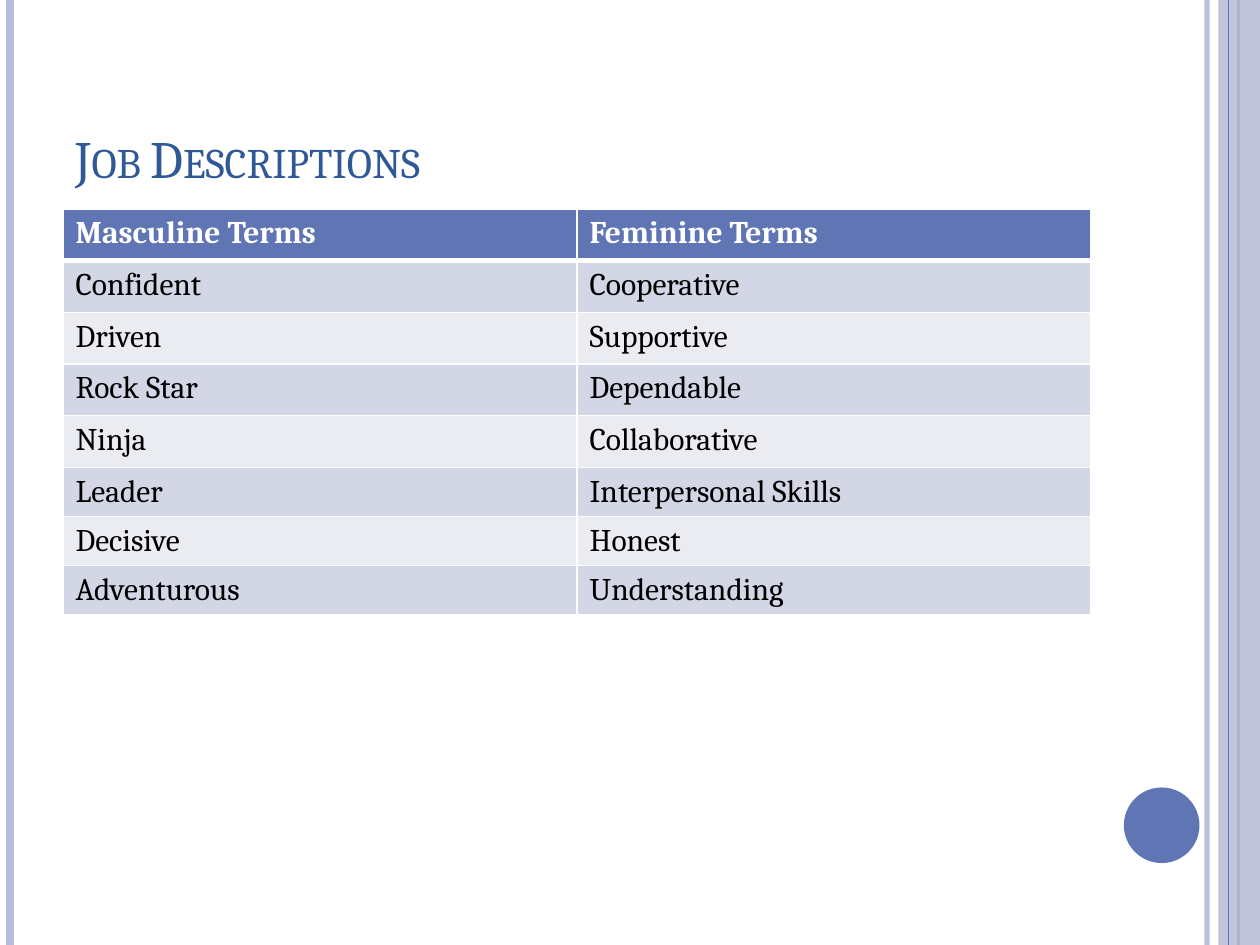
from dataclasses import dataclass

from lxml import etree
from pptx import Presentation
from pptx.dml.color import RGBColor
from pptx.enum.shapes import MSO_CONNECTOR, MSO_SHAPE
from pptx.enum.text import MSO_ANCHOR, MSO_AUTO_SIZE, PP_ALIGN
from pptx.oxml.ns import qn
from pptx.util import Inches, Pt

LINE = MSO_CONNECTOR.STRAIGHT
RECT, OVAL = MSO_SHAPE.RECTANGLE, MSO_SHAPE.OVAL
BOTTOM, LEFT = MSO_ANCHOR.BOTTOM, PP_ALIGN.LEFT
NO_FIT = MSO_AUTO_SIZE.NONE


@dataclass(frozen=True)
class Theme:
    font: str = "Cambria"
    title: str = "2F5897"
    main: str = "6076B4"
    pale: str = "B7BDD6"
    odd: str = "D2D6E5"
    even: str = "EAECF2"
    text: str = "000000"
    white: str = "FFFFFF"
    head_size: int = 30
    body_size: int = 18


THEME = Theme()

TERMS = [
    ("Masculine Terms", "Feminine Terms"),
    ("Confident", "Cooperative"),
    ("Driven", "Supportive"),
    ("Rock Star", "Dependable"),
    ("Ninja", "Collaborative"),
    ("Leader", "Interpersonal Skills"),
    ("Decisive", "Honest"),
    ("Adventurous", "Understanding"),
]


def rgb(color):
    return RGBColor.from_string(color)


def fade(fill, percent):
    color = fill.find(".//" + qn("a:srgbClr"))
    etree.SubElement(color, qn("a:alpha"), val=str(percent * 1000))


def style(run, size, color, bold=False):
    font = run.font
    font.name, font.size, font.bold = THEME.font, Pt(size), bold
    font.color.rgb = rgb(color)


def add_rule(slide, x, top, height, color, width, alpha=100):
    rule = slide.shapes.add_connector(
        LINE, Inches(x), Inches(top), Inches(x), Inches(top + height))
    rule.line.color.rgb = rgb(color)
    rule.line.width = Pt(width)
    props = rule._element.spPr
    etree.SubElement(props, qn("a:effectLst"))
    if alpha < 100:
        fade(props, alpha)


def add_solid(slide, kind, box, color, alpha=100):
    shape = slide.shapes.add_shape(kind, *map(Inches, box))
    shape.shadow.inherit = False
    shape.fill.solid()
    shape.fill.fore_color.rgb = rgb(color)
    shape.line.fill.background()
    if alpha < 100:
        fade(shape._element.spPr, alpha)


def add_frame(slide, box):
    left, top, width, height = box
    right = left + width
    add_rule(slide, right - 0.42, top, height, THEME.pale, 3, 93)
    add_rule(slide, left + 0.08, top, height, THEME.pale, 4.5)
    add_rule(slide, right - 0.17, top, height, THEME.main, 1.5)
    add_solid(slide, RECT, (right - 0.33, top, 0.33, height), THEME.pale, 87)
    add_rule(slide, right - 0.25, top, height, THEME.main, 0.75)
    add_solid(slide, OVAL, (right - 1.08, top + height - 1.25, 0.6, 0.6),
              THEME.main)


def add_title(slide, box, text):
    title = slide.shapes.title
    title.left, title.top, title.width, title.height = map(Inches, box)
    frame = title.text_frame
    frame.auto_size, frame.word_wrap = NO_FIT, True
    frame.vertical_anchor = BOTTOM
    para = frame.paragraphs[0]
    para.alignment = LEFT
    run = para.add_run()
    run.text = text
    style(run, THEME.head_size, THEME.title)
    run.font._element.set("cap", "small")


def add_edges(cell, base):
    props = cell._tc.get_or_add_tcPr()
    for side, width in (("L", 1), ("R", 1), ("T", 1), ("B", base)):
        edge = etree.SubElement(props, qn("a:ln" + side), w=str(Pt(width)))
        fill = etree.SubElement(edge, qn("a:solidFill"))
        etree.SubElement(fill, qn("a:srgbClr"), val=THEME.white)


def add_terms(slide, box, rows):
    table = slide.shapes.add_table(
        len(rows), len(rows[0]), *map(Inches, box)).table
    for r, words in enumerate(rows):
        head = r == 0
        table.rows[r].height = Inches(0.41 if r < 5 else 0.39)
        back = THEME.main if head else THEME.odd if r % 2 else THEME.even
        for c, word in enumerate(words):
            cell = table.cell(r, c)
            add_edges(cell, 3 if head else 1)
            cell.fill.solid()
            cell.fill.fore_color.rgb = rgb(back)
            run = cell.text_frame.paragraphs[0].add_run()
            run.text = word
            style(run, THEME.body_size,
                  THEME.white if head else THEME.text, head)


def main():
    deck = Presentation()
    deck.slide_width, deck.slide_height = Inches(10), Inches(7.5)
    slide = deck.slides.add_slide(deck.slide_layouts[5])
    add_frame(slide, (0, 0, 10, 7.5))
    add_title(slide, (0.5, 0.3, 8.17, 1.25), "Job Descriptions")
    add_terms(slide, (0.5, 1.66, 8.16, 3.22), TERMS)
    deck.save("out.pptx")


if __name__ == "__main__":
    main()
